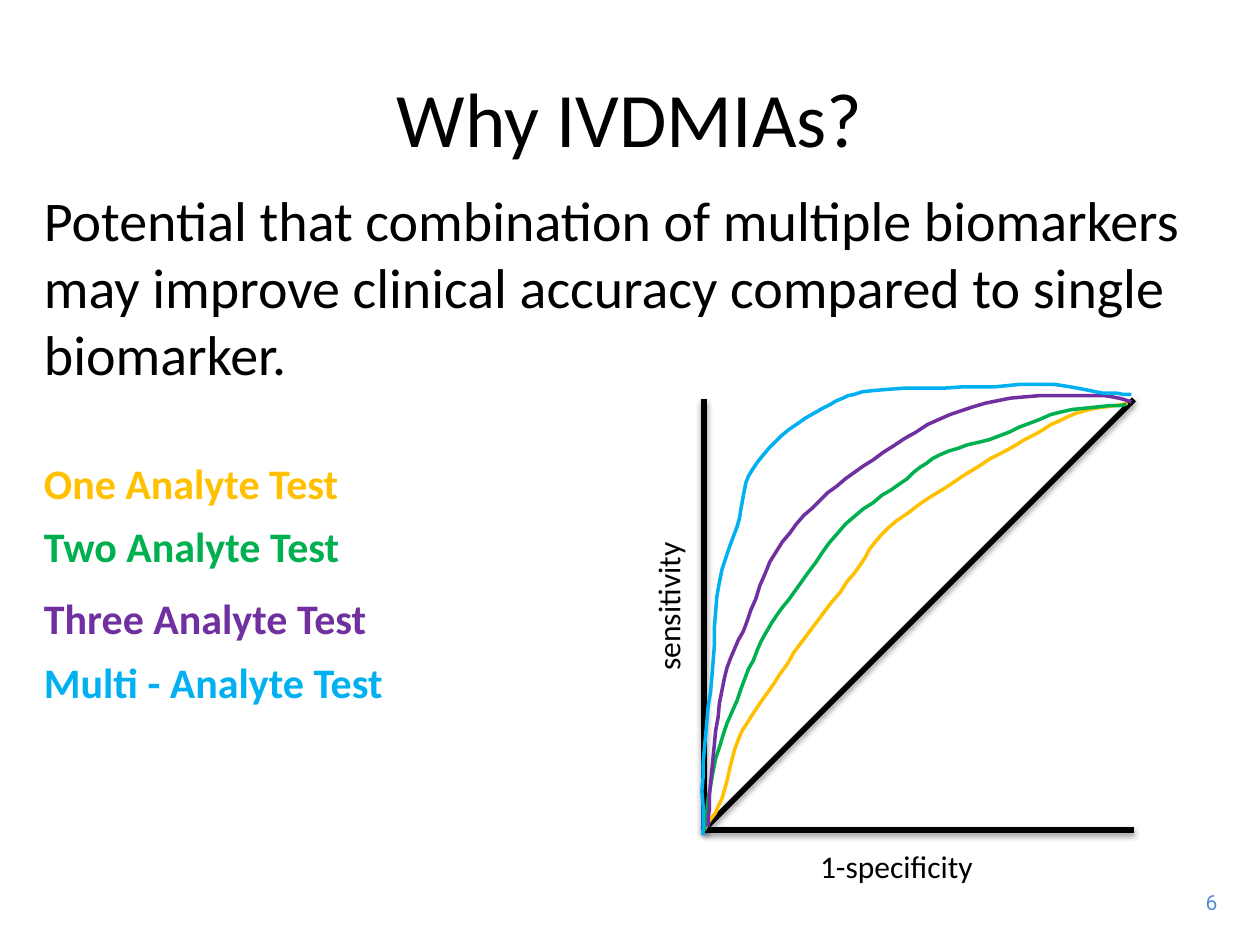
from collections import namedtuple
from lxml.etree import SubElement
from pptx import Presentation
from pptx.dml.color import RGBColor
from pptx.enum.shapes import MSO_CONNECTOR
from pptx.enum.text import MSO_ANCHOR, PP_ALIGN
from pptx.oxml.ns import qn
from pptx.util import Pt

PX = 9144
CURVE_STEPS = 6
Box = namedtuple("Box", "left top width height")

COLORS = {
    "ink": "000000",
    "page": "558ED5",
    "one": "FFC000",
    "two": "00B050",
    "three": "7030A0",
    "multi": "00B0F0",
}

ANALYTE_TESTS = [
    ("One Analyte Test", "one", 0),
    ("Two Analyte Test", "two", 50),
    ("Three Analyte Test", "three", 107),
    ("Multi - Analyte Test", "multi", 158),
]

ROC_CURVES = {
    "one": [(0, 355), (15, 330), (28, 283), (51, 246), (84, 198), (120, 151),
            (147, 115), (200, 78), (255, 45), (296, 24), (337, 16)],
    "two": [(1, 355), (10, 298), (30, 243), (50, 198), (78, 158), (113, 112),
            (156, 80), (188, 57), (235, 42), (284, 23), (336, 17)],
    "three": [(340, 15), (312, 10), (244, 12), (187, 29), (135, 61), (93, 93),
              (58, 134), (35, 189), (17, 234), (8, 297), (4, 352)],
    "multi": [(340, 9), (312, 7), (278, 1), (220, 3), (135, 6), (101, 17),
              (62, 42), (36, 74), (29, 107), (13, 158), (7, 233), (0, 302), (0, 359)],
}


def emu(values):
    return [value * PX for value in values]


def rgb(name):
    return RGBColor.from_string(COLORS[name])


def set_text(frame, words, color, align=PP_ALIGN.LEFT, **font_format):
    paragraph = frame.paragraphs[0]
    paragraph.text = words
    paragraph.alignment = align
    font = paragraph.runs[0].font
    for key, value in {"name": "Calibri", **font_format}.items():
        setattr(font, key, value)
    font.color.rgb = rgb(color)


def add_label(slide, box, words, color="ink", wrap=True, **text_format):
    label = slide.shapes.add_textbox(*emu(box))
    label.text_frame.word_wrap = wrap
    set_text(label.text_frame, words, color, **text_format)
    return label


def place_title(slide, box, words):
    title = slide.shapes.title
    for key, value in zip(box._fields, emu(box)):
        setattr(title, key, value)
    title.text_frame.vertical_anchor = MSO_ANCHOR.MIDDLE
    set_text(title.text_frame, words, "ink", PP_ALIGN.CENTER, size=Pt(44))


def add_legend(slide, box):
    for words, color, offset in ANALYTE_TESTS:
        row = Box(box.left, box.top + offset, box.width, 50)
        add_label(slide, row, words, color, size=Pt(24), bold=True)


def add_axis(slide, start, end):
    axis = slide.shapes.add_connector(MSO_CONNECTOR.STRAIGHT, *emu(start + end))
    axis.line.color.rgb = rgb("ink")
    axis.line.width = Pt(3.25)
    effects = SubElement(axis._element.spPr, qn("a:effectLst"))
    shadow = SubElement(effects, qn("a:outerShdw"), blurRad="40000", dist="20000",
                        dir="5400000", rotWithShape="0")
    shade = SubElement(shadow, qn("a:srgbClr"), val=COLORS["ink"])
    SubElement(shade, qn("a:alpha"), val="38000")


def spline(a, b, c, d, t):
    return b + t * (c - a + t * (2 * a - 5 * b + 4 * c - d
                                 + t * (3 * b - a - 3 * c + d))) / 2


def smooth_points(knots):
    padded = [knots[0], *knots, knots[-1]]
    for window in zip(padded, padded[1:], padded[2:], padded[3:]):
        for step in range(1, CURVE_STEPS + 1):
            yield tuple(spline(*axis, step / CURVE_STEPS) for axis in zip(*window))


def add_curve(slide, box, color, knots):
    builder = slide.shapes.build_freeform(*knots[0], scale=PX)
    builder.add_line_segments(
        [(round(x, 2), round(y, 2)) for x, y in smooth_points(knots)], close=False)
    curve = builder.convert_to_shape(*emu(box[:2]))
    curve.shadow.inherit = False
    curve.fill.background()
    curve.line.color.rgb = rgb(color)
    curve.line.width = Pt(2)


def add_roc_plot(slide, box):
    left, top, width, height = box
    right, bottom = left + width, top + height
    upper = top + 13
    add_label(slide, Box(left + 83, bottom + 8, 192, 40), "1-specificity", size=Pt(18))
    sensitivity = add_label(slide, Box(left - 124, top + 122, 192, 40),
                            "sensitivity", size=Pt(18))
    sensitivity.rotation = 270
    add_axis(slide, (left + 1, upper), (left + 1, bottom))
    add_axis(slide, (left, bottom), (right, bottom))
    add_axis(slide, (right, upper), (left, bottom))
    for color, knots in ROC_CURVES.items():
        add_curve(slide, box, color, knots)


def main():
    deck = Presentation()
    deck.slide_width, deck.slide_height = emu((1000, 750))
    slide = deck.slides.add_slide(deck.slide_layouts[5])
    place_title(slide, Box(50, 30, 900, 125), "Why IVDMIAs?")
    add_label(slide, Box(25, 142, 950, 172),
              "Potential that combination of multiple biomarkers may improve "
              "clinical accuracy compared to single biomarker.", size=Pt(32))
    add_roc_plot(slide, Box(558, 304, 342, 355))
    add_legend(slide, Box(25, 358, 392, 208))
    add_label(slide, Box(935, 701, 41, 30), "6", "page", wrap=False,
              align=PP_ALIGN.RIGHT, name="Roboto", size=Pt(12))
    deck.save("out.pptx")


if __name__ == "__main__":
    main()
